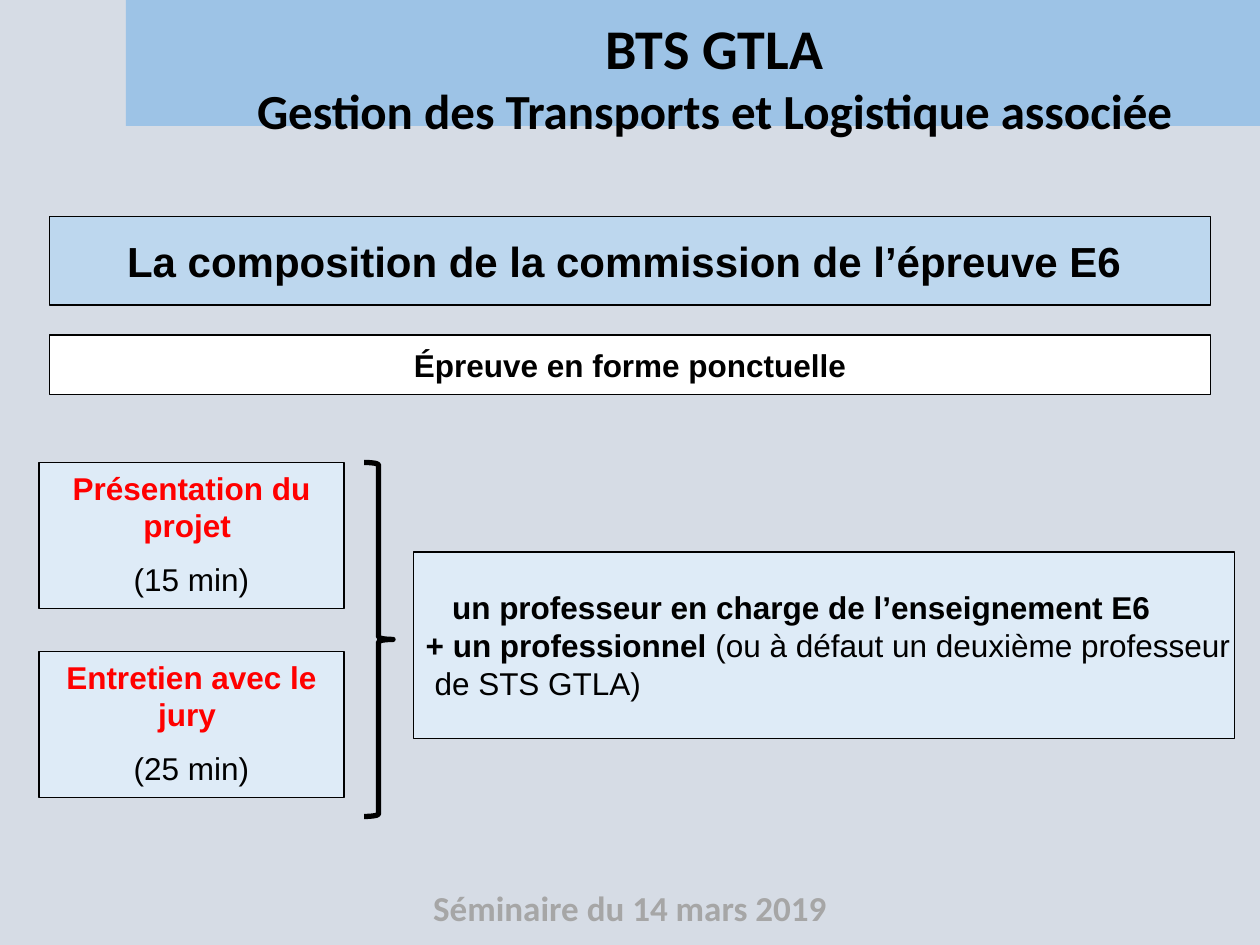
from dataclasses import dataclass
from typing import Optional

from pptx import Presentation
from pptx.dml.color import RGBColor
from pptx.enum.shapes import MSO_SHAPE
from pptx.enum.text import MSO_ANCHOR, MSO_AUTO_SIZE, PP_ALIGN
from pptx.util import Inches, Pt

COLORS = {
    "background": "D6DCE5",
    "banner": "9DC3E6",
    "title": "BDD7EE",
    "panel": "DEEBF7",
    "white": "FFFFFF",
    "black": "000000",
    "red": "FF0000",
    "grey": "A6A6A6",
}


@dataclass(frozen=True)
class Span:
    text: str
    size: int = 18
    color: str = "black"
    bold: bool = True
    font: str = "Arial"


@dataclass(frozen=True)
class Line:
    spans: tuple[Span, ...]
    align: PP_ALIGN = PP_ALIGN.CENTER
    space_before: int = 0
    indent: float = 0


@dataclass(frozen=True)
class Panel:
    left: float
    top: float
    width: float
    height: float
    lines: tuple[Line, ...]
    fill: Optional[str] = "panel"
    anchor: MSO_ANCHOR = MSO_ANCHOR.MIDDLE
    wrap: bool = True


def rgb(name: str) -> RGBColor:
    return RGBColor.from_string(COLORS[name])


def write_lines(shape, panel: Panel) -> None:
    frame = shape.text_frame
    frame.auto_size = MSO_AUTO_SIZE.NONE
    frame.word_wrap = panel.wrap
    frame.vertical_anchor = panel.anchor
    for number, line in enumerate(panel.lines):
        para = frame.add_paragraph() if number else frame.paragraphs[0]
        para.alignment = line.align
        para.space_before = Pt(line.space_before)
        if line.indent:
            para._p.get_or_add_pPr().set("marL", str(Inches(line.indent)))
        for span in line.spans:
            run = para.add_run()
            run.text = span.text
            run.font.name = span.font
            run.font.size = Pt(span.size)
            run.font.bold = span.bold
            run.font.color.rgb = rgb(span.color)


def draw_panel(slide, panel: Panel, shape=None) -> None:
    """Draw the panel as a new rectangle, a text box if unfilled, or in a given shape."""
    place = [Inches(v) for v in (panel.left, panel.top, panel.width, panel.height)]
    if shape is not None:
        shape.left, shape.top, shape.width, shape.height = place
    elif panel.fill:
        shape = slide.shapes.add_shape(MSO_SHAPE.RECTANGLE, *place)
        shape.shadow.inherit = False
    else:
        shape = slide.shapes.add_textbox(*place)
    if panel.fill:
        shape.fill.solid()
        shape.fill.fore_color.rgb = rgb(panel.fill)
        shape.line.color.rgb = rgb("black")
        shape.line.width = Pt(0.75)
    write_lines(shape, panel)


def curve_points(start, control1, control2, end, steps: int = 40) -> list:
    """Points along a cubic Bézier curve, without its start."""
    points = []
    for step in range(1, steps + 1):
        t = step / steps
        weights = ((1 - t) ** 3, 3 * t * (1 - t) ** 2, 3 * t * t * (1 - t), t ** 3)
        points.append(tuple(
            sum(weight * value for weight, value in zip(weights, axis))
            for axis in zip(start, control1, control2, end)
        ))
    return points


def draw_banner(slide) -> None:
    right, middle, left = (10, 1.21), (5.7, 1.17), (1.25, 1.41)
    points = [(10, 0), right]
    points += curve_points(right, (9.29, 1.44), (7.16, 1.14), middle)
    points += curve_points(middle, (4.24, 1.21), (1.99, 1.64), left)
    builder = slide.shapes.build_freeform(1.25, 0, scale=Inches(1))
    builder.add_line_segments(points, close=True)
    banner = builder.convert_to_shape()
    banner.shadow.inherit = False
    banner.fill.solid()
    banner.fill.fore_color.rgb = rgb("banner")
    banner.line.fill.background()


def draw_brace(slide) -> None:
    brace = slide.shapes.add_shape(
        MSO_SHAPE.RIGHT_BRACE, Inches(2.89), Inches(3.67), Inches(0.23), Inches(2.81)
    )
    brace.shadow.inherit = False
    brace.fill.background()
    brace.line.color.rgb = rgb("black")
    brace.line.width = Pt(3)


def stage_panel(top: float, name: str, duration: str) -> Panel:
    return Panel(0.31, top, 2.42, 1.16, (
        Line((Span(name, color="red"),)),
        Line((Span(duration, bold=False),), space_before=9),
    ), anchor=MSO_ANCHOR.TOP)


TITLE = Panel(0.39, 1.72, 9.22, 0.7, (
    Line((Span("La composition de la commission de l’épreuve E6 ", 24),)),
), fill="title", wrap=False)

PANELS = (
    Panel(1.88, 0.06, 7.58, 1.11, (
        Line((Span("BTS GTLA", 32, font="Calibri"),)),
        Line((Span("Gestion des Transports et Logistique associée", 28, font="Calibri"),)),
    ), fill=None, anchor=MSO_ANCHOR.TOP),
    Panel(2.5, 6.99, 5, 0.44, (
        Line((Span("Séminaire du 14 mars 2019", 20, "grey", font="Calibri"),)),
    ), fill=None, anchor=MSO_ANCHOR.TOP),
    Panel(0.39, 2.66, 9.22, 0.47, (
        Line((Span("Épreuve en forme ponctuelle"),)),
    ), fill="white"),
    Panel(3.28, 4.38, 6.52, 1.48, (
        Line((Span("un professeur en charge de l’enseignement E6"),),
             PP_ALIGN.LEFT, indent=0.21),
        Line((Span("+ un professionnel "),
              Span("(ou à défaut un deuxième professeur", bold=False)), PP_ALIGN.LEFT),
        Line((Span("de STS GTLA)", bold=False),), PP_ALIGN.LEFT, indent=0.07),
    ), wrap=False),
    stage_panel(3.67, "Présentation du projet ", "(15 min)"),
    stage_panel(5.17, "Entretien avec le jury ", "(25 min)"),
)


def main() -> None:
    deck = Presentation()
    deck.slide_width, deck.slide_height = Inches(10), Inches(7.5)
    slide = deck.slides.add_slide(deck.slide_layouts[5])
    slide.background.fill.solid()
    slide.background.fill.fore_color.rgb = rgb("background")
    draw_banner(slide)
    draw_panel(slide, TITLE, slide.shapes.title)
    for panel in PANELS:
        draw_panel(slide, panel)
    draw_brace(slide)
    deck.save("out.pptx")


if __name__ == "__main__":
    main()
